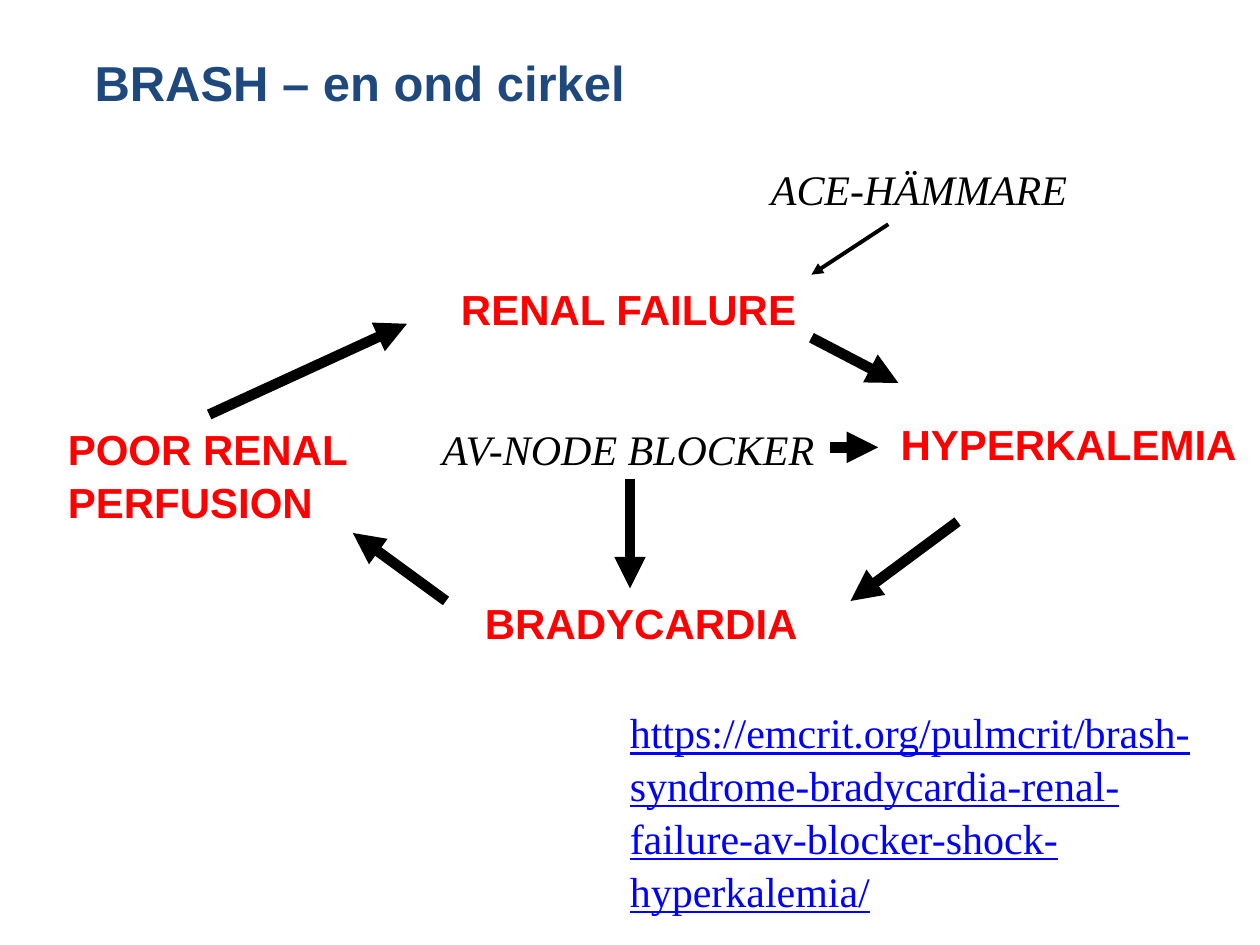
from lxml import etree
from pptx import Presentation
from pptx.dml.color import RGBColor
from pptx.enum.shapes import MSO_CONNECTOR
from pptx.enum.text import MSO_ANCHOR, MSO_AUTO_SIZE, PP_ALIGN
from pptx.oxml.ns import qn
from pptx.util import Inches, Pt

NAVY = RGBColor(0x1F, 0x49, 0x7D)
RED = RGBColor(0xFF, 0x00, 0x00)
BLACK = RGBColor(0x00, 0x00, 0x00)
BLUE = RGBColor(0x00, 0x00, 0xFF)
SANS = "Arial"
SERIF = "Times New Roman"


def add_label(text, left, top, width, height, name, color, wrap=False):
    box = slide.shapes.add_textbox(Inches(left), Inches(top), Inches(width), Inches(height))
    frame = box.text_frame
    frame.word_wrap = wrap
    frame.auto_size = MSO_AUTO_SIZE.SHAPE_TO_FIT_TEXT
    frame.text = text
    for paragraph in frame.paragraphs:
        paragraph.line_spacing = 1.05
        font = paragraph.runs[0].font
        font.name, font.size, font.color.rgb = name, Pt(24), color
        font.bold = name == SANS
        font.italic = color == BLACK
        font.underline = color == BLUE


def add_arrow(start, end, weight):
    arrow = slide.shapes.add_connector(
        MSO_CONNECTOR.STRAIGHT, *[Inches(value) for value in start + end])
    arrow.line.color.rgb = BLACK
    arrow.line.width = Pt(weight)
    line = arrow.line._get_or_add_ln()
    etree.SubElement(line, qn("a:tailEnd"), type="triangle")
    etree.SubElement(line.getparent(), qn("a:effectLst"))


presentation = Presentation()
presentation.slide_width = Inches(10)
presentation.slide_height = Inches(7.5)
slide = presentation.slides.add_slide(presentation.slide_layouts[5])

title = slide.shapes.title
title.left, title.top = Inches(0.75), Inches(0.42)
title.width, title.height = Inches(8.5), Inches(1.25)
frame = title.text_frame
frame.text = "BRASH – en ond cirkel"
frame.margin_left = frame.margin_right = frame.margin_top = frame.margin_bottom = 0
frame.vertical_anchor = MSO_ANCHOR.TOP
paragraph = frame.paragraphs[0]
paragraph.alignment = PP_ALIGN.LEFT
font = paragraph.runs[0].font
font.name, font.size, font.bold, font.color.rgb = SANS, Pt(28), True, NAVY

cycle_stages = [
    ("RENAL FAILURE", 3.56, 2.18, 2.89, 0.5),
    ("HYPERKALEMIA", 7.05, 3.25, 2.9, 0.5),
    ("BRADYCARDIA", 3.75, 4.67, 2.71, 0.5),
    ("POOR RENAL\nPERFUSION", 0.44, 3.29, 2.45, 0.91),
]
for stage in cycle_stages:
    add_label(*stage, SANS, RED)

drugs = [
    ("ACE-HÄMMARE", 6.02, 1.23, 2.57, 0.5),
    ("AV-NODE BLOCKER", 3.41, 3.29, 3.19, 0.5),
]
for drug in drugs:
    add_label(*drug, SERIF, BLACK)

add_label("https://emcrit.org/pulmcrit/brash-syndrome-bradycardia-renal-failure-av-blocker-shock-hyperkalemia/",
          4.9, 5.54, 5, 1.72, SERIF, BLUE, wrap=True)

add_arrow((7.05, 1.78), (6.44, 2.18), 2.25)
thick_arrows = [
    ((6.44, 2.68), (7.13, 3.04)),
    ((7.6, 4.14), (6.75, 4.77)),
    ((3.54, 4.77), (2.8, 4.23)),
    ((1.66, 3.29), (3.23, 2.57)),
    ((6.59, 3.55), (6.97, 3.55)),
    ((5, 3.8), (5, 4.67)),
]
for start, end in thick_arrows:
    add_arrow(start, end, 6)

presentation.save("out.pptx")
